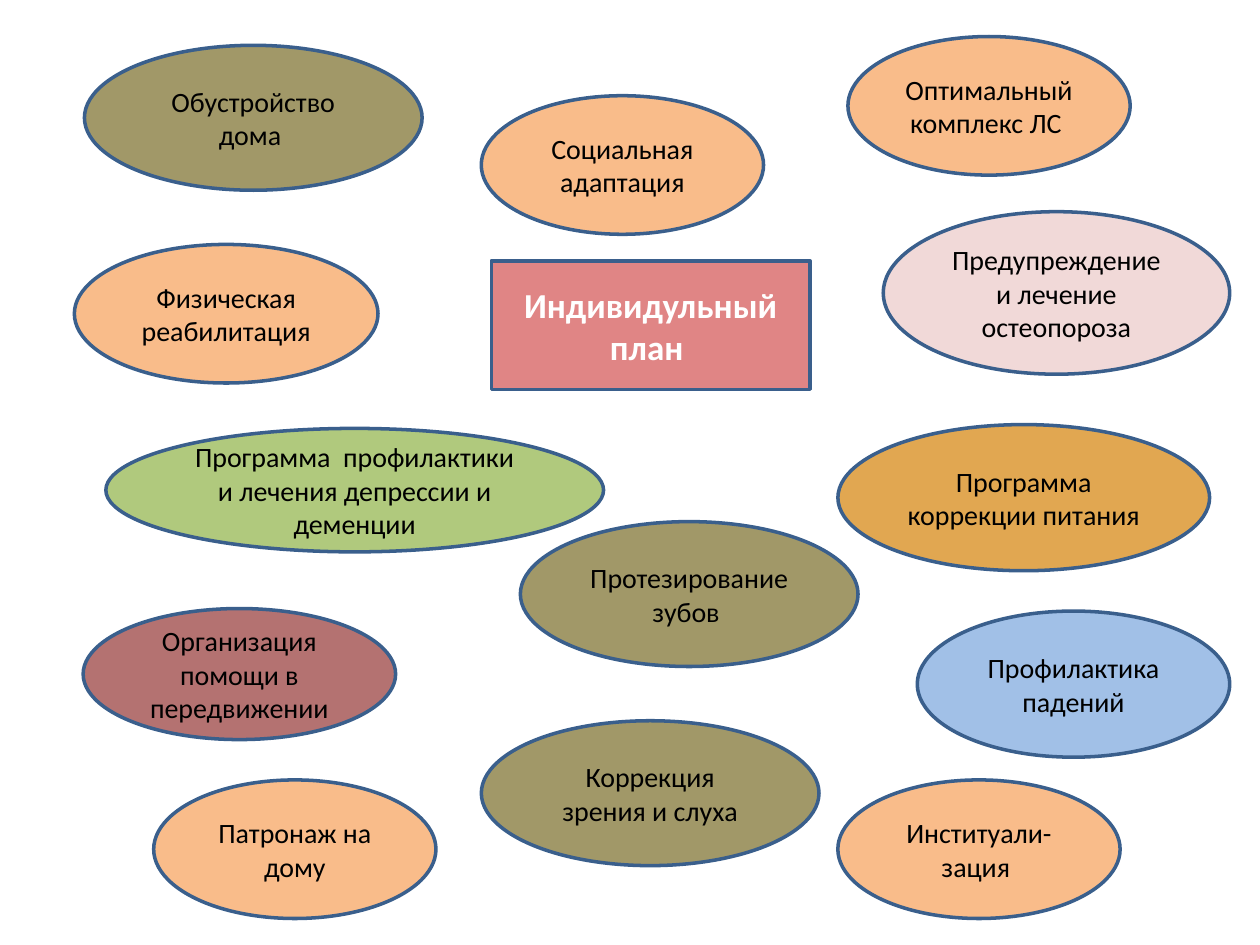
from lxml import etree
from pptx import Presentation
from pptx.dml.color import RGBColor
from pptx.enum.shapes import MSO_SHAPE
from pptx.enum.text import MSO_ANCHOR, PP_ALIGN
from pptx.oxml.ns import qn
from pptx.util import Inches, Pt

RECTANGLE = MSO_SHAPE.RECTANGLE
OVAL = MSO_SHAPE.OVAL
MIDDLE = MSO_ANCHOR.MIDDLE
CENTER = PP_ALIGN.CENTER

FONT = "Calibri"
OUTLINE = "3A5F8C"
RED = ("C00000", 48)
PINK = ("E6B9B8", 54)
ORANGE = ("F79646", 63)
MAROON = ("953735", 70)
OLIVE = ("948A54", 88)
BLUE = ("8EB4E3", 83)
AMBER = ("DA9126", 80)
GREEN = ("9BBB59", 78)

ORANGE_SIZE = (2.24, 1.1)
OLIVE_SIZE = (2.68, 1.15)

MEASURES = [
    ("Предупреждение и лечение остеопороза", (7.01, 1.68), (2.75, 1.29), PINK),
    ("Социальная адаптация", (3.82, 0.76), ORANGE_SIZE, ORANGE),
    ("Организация помощи в передвижении", (0.66, 4.83), (2.48, 1.04), MAROON),
    ("Коррекция зрения и слуха", (3.82, 5.72), OLIVE_SIZE, OLIVE),
    ("Профилактика падений", (7.28, 4.85), (2.48, 1.16), BLUE),
    ("Программа коррекции питания", (6.65, 3.37), (2.95, 1.16), AMBER),
    ("Программа  профилактики и лечения депрессии и деменции",
     (0.84, 3.4), (3.95, 0.98), GREEN),
    ("Физическая реабилитация", (0.59, 1.94), (2.41, 1.1), ORANGE),
    ("Оптимальный комплекс ЛС ", (6.73, 0.29), ORANGE_SIZE, ORANGE),
    ("Патронаж на дому", (1.22, 6.19), ORANGE_SIZE, ORANGE),
    ("Институали-зация ", (6.65, 6.19), ORANGE_SIZE, ORANGE),
    ("Протезирование зубов ", (4.13, 4.14), OLIVE_SIZE, OLIVE),
    ("Обустройство дома ", (0.67, 0.36), OLIVE_SIZE, OLIVE),
]


def rgb(value):
    return RGBColor.from_string(value)


def fill_translucent(shape, color, opacity):
    shape.fill.solid()
    shape.fill.fore_color.rgb = rgb(color)
    color_node = shape.element.spPr.find(qn("a:solidFill"))[0]
    etree.SubElement(color_node, qn("a:alpha"), val=str(opacity * 1000))


def write_label(shape, text, size, color, bold):
    frame = shape.text_frame
    frame.word_wrap = True
    frame.vertical_anchor = MIDDLE
    para = frame.paragraphs[0]
    para.alignment = CENTER
    span = para.add_run()
    span.text = text
    span.font.name = FONT
    span.font.size = Pt(size)
    span.font.bold = bold
    span.font.color.rgb = rgb(color)


def add_node(page, kind, text, position, size, fill,
             text_size=16, text_color="000000", bold=False):
    shape = page.shapes.add_shape(kind, *map(Inches, position + size))
    shape.shadow.inherit = False
    fill_translucent(shape, *fill)
    shape.line.color.rgb = rgb(OUTLINE)
    shape.line.width = Pt(2)
    write_label(shape, text, text_size, text_color, bold)


def main():
    deck = Presentation()
    deck.slide_width = Inches(10)
    deck.slide_height = Inches(7.5)
    page = deck.slides.add_slide(deck.slide_layouts[6])
    add_node(page, RECTANGLE, "Индивидульный план ", (3.9, 2.07), (2.53, 1.02),
             RED, text_size=20, text_color="FFFFFF", bold=True)
    for text, position, size, fill in MEASURES:
        add_node(page, OVAL, text, position, size, fill)
    deck.save("out.pptx")


if __name__ == "__main__":
    main()
